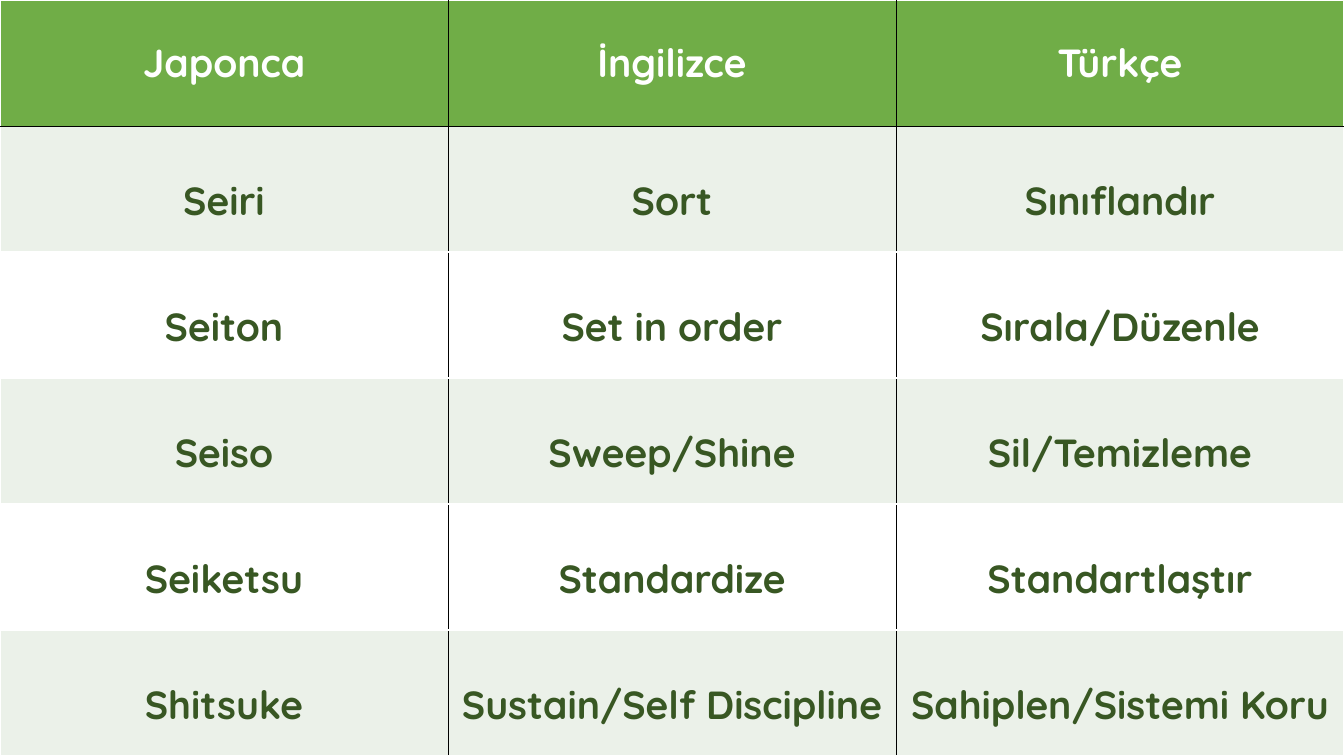
from lxml import etree
from pptx import Presentation
from pptx.dml.color import RGBColor
from pptx.enum.text import MSO_ANCHOR, PP_ALIGN
from pptx.oxml.ns import qn
from pptx.util import Emu, Pt

CENTER = PP_ALIGN.CENTER
MIDDLE = MSO_ANCHOR.MIDDLE
WIDTH, HEIGHT = 1344, 756
EMU_PER_PX = 12192000 / WIDTH
FONT = "Quicksand"
WHITE, BLACK = "FFFFFF", "000000"
GREEN, DARK_GREEN, PALE_GREEN = "70AD47", "385723", "EBF1E9"
THICK_WHITE = (WHITE, 1)
THIN_BLACK = (BLACK, 0.25)

TERMS = [
    ("Japonca", "İngilizce", "Türkçe"),
    ("Seiri", "Sort", "Sınıflandır"),
    ("Seiton", "Set in order", "Sırala/Düzenle"),
    ("Seiso", "Sweep/Shine", "Sil/Temizleme"),
    ("Seiketsu", "Standardize", "Standartlaştır"),
    ("Shitsuke", "Sustain/Self Discipline", "Sahiplen/Sistemi Koru"),
]


def px(length):
    return Emu(round(length * EMU_PER_PX))


def color(value):
    return RGBColor.from_string(value)


class SlideBuilder:
    def __init__(self, deck, font, size):
        self.slide = deck.slides.add_slide(deck.slide_layouts[6])
        self.font = font
        self.size = size

    def table(self, left, top, width, height, rows):
        row_count, column_count = len(rows), len(rows[0])
        frame = self.slide.shapes.add_table(
            row_count, column_count, px(left), px(top), px(width), px(height)
        )
        table = frame.table
        for column in table.columns:
            column.width = px(width // column_count)
        for row in table.rows:
            row.height = px(height // row_count)
        for row_index, texts in enumerate(rows):
            for column_index, text in enumerate(texts):
                cell = table.cell(row_index, column_index)
                self.cell_text(cell, text, row_index == 0)
                cell.fill.solid()
                body_fill = PALE_GREEN if row_index % 2 else WHITE
                cell.fill.fore_color.rgb = color(GREEN if row_index == 0 else body_fill)
                self.cell_borders(
                    cell,
                    lnL=THIN_BLACK if column_index > 0 else THICK_WHITE,
                    lnR=THIN_BLACK if column_index < column_count - 1 else THICK_WHITE,
                    lnT=THIN_BLACK if row_index == 1 else THICK_WHITE,
                    lnB=THIN_BLACK if row_index == 0 else THICK_WHITE,
                )

    def cell_text(self, cell, text, is_header):
        cell.text = text
        cell.vertical_anchor = MIDDLE
        paragraph = cell.text_frame.paragraphs[0]
        paragraph.alignment = CENTER
        if not is_header:
            paragraph.line_spacing = 1.5
        font = paragraph.font
        font.name = self.font
        font.size = Pt(self.size)
        font.bold = True
        font.color.rgb = color(WHITE if is_header else DARK_GREEN)

    def cell_borders(self, cell, **borders):
        properties = cell._tc.get_or_add_tcPr()
        for position, (side, (line_color, points)) in enumerate(borders.items()):
            line = etree.Element(qn(f"a:{side}"), w=str(Pt(points)))
            fill = etree.SubElement(line, qn("a:solidFill"))
            etree.SubElement(fill, qn("a:srgbClr"), val=line_color)
            properties.insert(position, line)


def main():
    deck = Presentation()
    deck.slide_width, deck.slide_height = px(WIDTH), px(HEIGHT)
    SlideBuilder(deck, FONT, 28).table(0, 0, WIDTH, HEIGHT, TERMS)
    deck.save("out.pptx")


if __name__ == "__main__":
    main()
